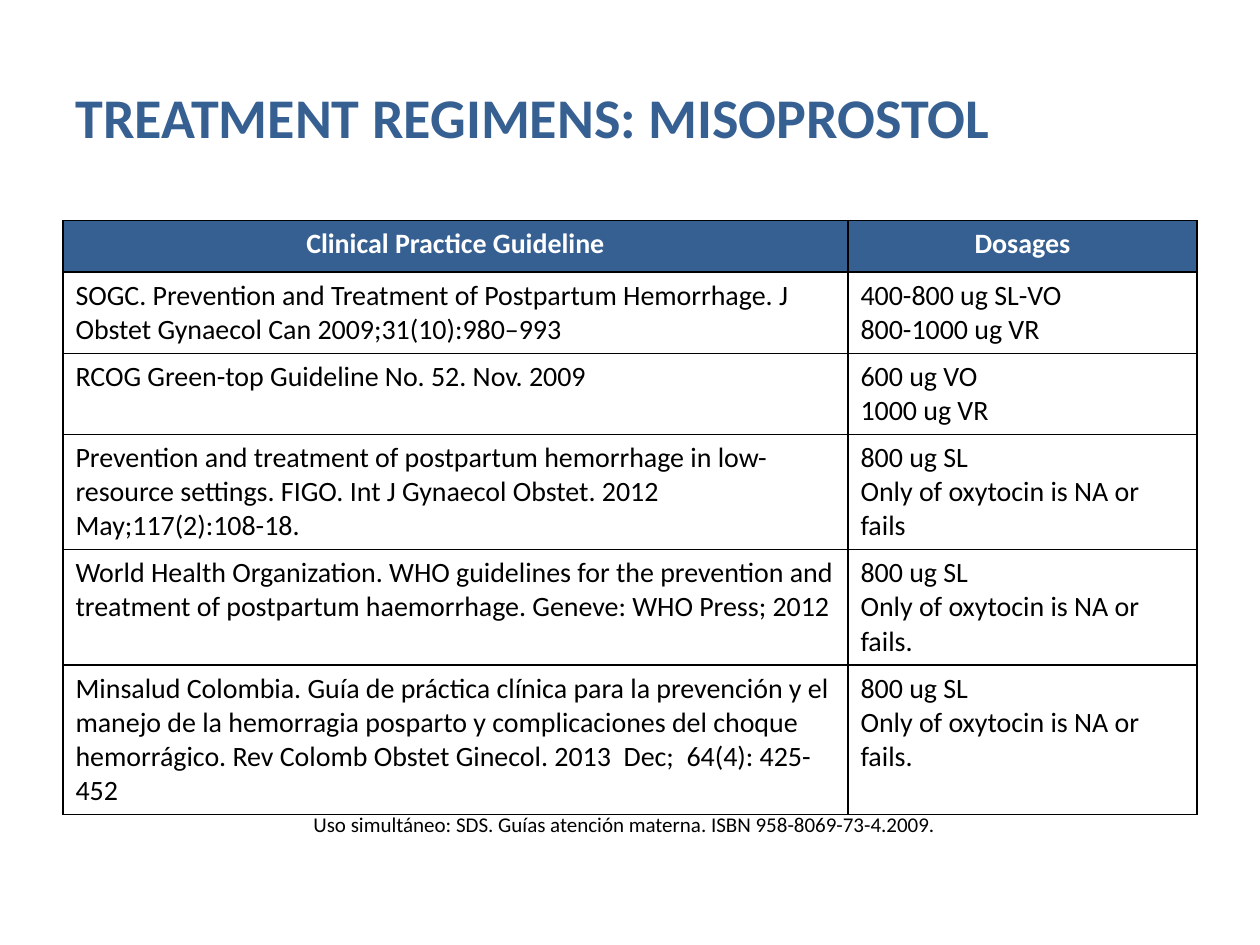
from lxml.etree import SubElement
from pptx import Presentation
from pptx.dml.color import RGBColor
from pptx.enum.text import MSO_ANCHOR as Anchor, MSO_AUTO_SIZE as AutoSize, PP_ALIGN as Align
from pptx.oxml.ns import qn
from pptx.util import Inches, Pt

WIDTH, HEIGHT = 10, 7.5
BLUE, WHITE, BLACK = "376092", "FFFFFF", "000000"
HEADER_HEIGHT, LINE_HEIGHT, CELL_PADDING = 0.41, 0.27, 0.1

HEADINGS = ("Clinical Practice Guideline", "Dosages")
REGIMENS = [
    ("SOGC. Prevention and Treatment of Postpartum Hemorrhage. J Obstet Gynaecol Can 2009;31(10):980–993",
     "400-800 ug SL-VO\n800-1000 ug VR", 2),
    ("RCOG Green-top Guideline No. 52. Nov. 2009",
     "600 ug VO\n1000 ug VR", 2),
    ("Prevention and treatment of postpartum hemorrhage in low-resource settings. FIGO. "
     "Int J Gynaecol Obstet. 2012 May;117(2):108-18.",
     "800 ug SL\nOnly of oxytocin is NA or fails", 3),
    ("World Health Organization. WHO guidelines for the prevention and treatment of "
     "postpartum haemorrhage. Geneve: WHO Press; 2012",
     "800 ug SL\nOnly of oxytocin is NA or fails.", 3),
    ("Minsalud Colombia. Guía de práctica clínica para la prevención y el manejo de la hemorragia "
     "posparto y complicaciones del choque hemorrágico. Rev Colomb Obstet Ginecol. 2013  Dec;  64(4): 425-452",
     "800 ug SL\nOnly of oxytocin is NA or fails.", 4),
]


def color(value):
    return RGBColor.from_string(value)


class SlideBuilder:
    font = "Calibri"

    def __init__(self, presentation):
        self.slide = presentation.slides.add_slide(presentation.slide_layouts[5])

    def box(self, left, top, width, height):
        return (Inches(left * WIDTH), Inches(top * HEIGHT),
                Inches(width * WIDTH), Inches(height * HEIGHT))

    def set_text(self, frame, text, size, hex_color, bold=False, align=Align.LEFT):
        frame.text = text
        frame.word_wrap = True
        for paragraph in frame.paragraphs:
            paragraph.alignment = align
            for run in paragraph.runs:
                run.font.name = self.font
                run.font.size = Pt(size)
                run.font.bold = bold
                run.font.color.rgb = color(hex_color)

    def title(self, text, *shares):
        shape = self.slide.shapes.title
        shape.left, shape.top, shape.width, shape.height = self.box(*shares)
        self.set_text(shape.text_frame, text, 32, BLUE, bold=True)
        shape.text_frame.vertical_anchor = Anchor.MIDDLE

    def note(self, text, *shares):
        frame = self.slide.shapes.add_textbox(*self.box(*shares)).text_frame
        self.set_text(frame, text, 12, BLACK, align=Align.CENTER)
        frame.auto_size = AutoSize.SHAPE_TO_FIT_TEXT

    def border(self, cell):
        properties = cell._tc.get_or_add_tcPr()
        for position, side in enumerate(("a:lnL", "a:lnR", "a:lnT", "a:lnB")):
            line = SubElement(properties, qn(side), w=str(Pt(1)))
            fill = SubElement(line, qn("a:solidFill"))
            SubElement(fill, qn("a:srgbClr"), val=BLACK)
            properties.insert(position, line)

    def cell(self, cell, text, header):
        if header:
            self.set_text(cell.text_frame, text, 16, WHITE, True, Align.CENTER)
            cell.fill.solid()
            cell.fill.fore_color.rgb = color(BLUE)
        else:
            self.set_text(cell.text_frame, text, 16, BLACK)
            cell.fill.background()
        self.border(cell)

    def table(self, headings, regimens, column_shares, *shares):
        rows = [headings] + [regimen[:2] for regimen in regimens]
        heights = [HEADER_HEIGHT] + [CELL_PADDING + LINE_HEIGHT * lines for *_, lines in regimens]
        frame = self.slide.shapes.add_table(
            len(rows), len(headings), *self.box(*shares, sum(heights) / HEIGHT))
        table = frame.table
        for column, share in zip(table.columns, column_shares):
            column.width = Inches(share * WIDTH)
        for row_index, (texts, height) in enumerate(zip(rows, heights)):
            table.rows[row_index].height = Inches(height)
            for column_index, text in enumerate(texts):
                self.cell(table.cell(row_index, column_index), text, row_index == 0)


def main():
    presentation = Presentation()
    presentation.slide_width, presentation.slide_height = Inches(WIDTH), Inches(HEIGHT)
    builder = SlideBuilder(presentation)
    builder.title("TREATMENT REGIMENS: MISOPROSTOL", 0.05, 0.04, 0.9, 1.25 / HEIGHT)
    builder.table(HEADINGS, REGIMENS, (0.623, 0.277), 0.05, 1.75 / HEIGHT, 0.9)
    builder.note("Uso simultáneo: SDS. Guías atención materna. ISBN 958-8069-73-4.2009.",
                 0.05, 6.39 / HEIGHT, 0.891, 0.04)
    presentation.save("out.pptx")


if __name__ == "__main__":
    main()
